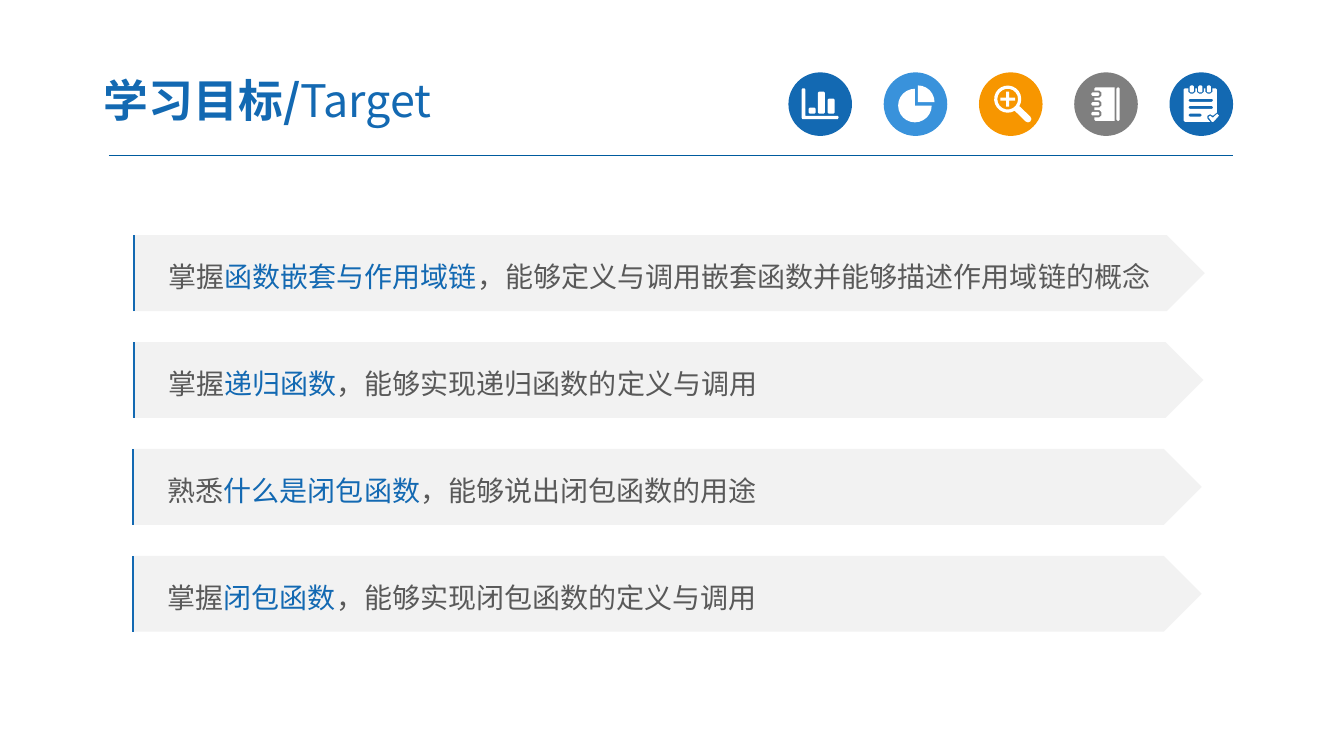
from math import cos, radians, sin

from lxml.etree import SubElement
from pptx import Presentation
from pptx.dml.color import RGBColor
from pptx.enum.shapes import MSO_CONNECTOR, MSO_SHAPE as SHAPE
from pptx.enum.text import MSO_ANCHOR, PP_ALIGN
from pptx.oxml.ns import qn
from pptx.util import Pt

BLUE, LIGHT_BLUE, ORANGE, GRAY = "1369B2", "3992DB", "F79600", "7F7F7F"
WHITE, BAND, BODY, RULE = "FFFFFF", "F2F2F2", "595959", "005B9E"
FONT = "Noto Sans CJK SC"


def color(value):
    return RGBColor.from_string(value)


def write_text(shape, runs, size, insets, line_spacing=None):
    """Fill a shape with one paragraph of (text, color, bold) runs."""
    frame = shape.text_frame
    frame.word_wrap = True
    frame.vertical_anchor = MSO_ANCHOR.MIDDLE
    frame.margin_left, frame.margin_top, frame.margin_right, frame.margin_bottom = map(Pt, insets)
    paragraph = frame.paragraphs[0]
    paragraph.alignment = PP_ALIGN.LEFT
    paragraph.line_spacing = line_spacing
    for text, run_color, bold in runs:
        run = paragraph.add_run()
        run.text = text
        run.font.size = Pt(size)
        run.font.bold = bold
        run.font.name = FONT
        run.font.color.rgb = color(run_color)
        SubElement(run.font._element, qn("a:ea"), typeface=FONT)


class SlidePainter:
    def __init__(self, slide):
        self.shapes = slide.shapes

    def fill(self, shape, fill):
        shape.shadow.inherit = False
        shape.fill.solid()
        shape.fill.fore_color.rgb = color(fill)
        shape.line.fill.background()
        return shape

    def shape(self, kind, left, top, width, height, fill):
        return self.fill(self.shapes.add_shape(kind, Pt(left), Pt(top), Pt(width), Pt(height)), fill)

    def symbol(self, left, top, contours):
        """Draw closed contours as one white shape; inner contours are holes."""
        placed = [[(Pt(left + x), Pt(top + y)) for x, y in contour] for contour in contours]
        builder = self.shapes.build_freeform(*placed[0][0])
        for index, (start, *rest) in enumerate(placed):
            if index:
                builder.move_to(*start)
            builder.add_line_segments(rest, close=True)
        self.fill(builder.convert_to_shape(), WHITE)

    def edge(self, left, top, height, line_color, width, margin=11.5):
        """Draw an upright edge whose frame reaches a margin to its right."""
        builder = self.shapes.build_freeform(Pt(left + margin), Pt(top))
        builder.move_to(Pt(left), Pt(top + height))
        builder.add_line_segments([(Pt(left), Pt(top))], close=False)
        edge = builder.convert_to_shape()
        edge.shadow.inherit = False
        edge.fill.background()
        edge.line.color.rgb = color(line_color)
        edge.line.width = Pt(width)

    def line(self, x1, y1, x2, y2, line_color, width):
        line = self.shapes.add_connector(MSO_CONNECTOR.STRAIGHT, Pt(x1), Pt(y1), Pt(x2), Pt(y2))
        line.line.color.rgb = color(line_color)
        line.line.width = Pt(width)
        SubElement(line._element.spPr, qn("a:effectLst"))

    def text_box(self, left, top, width, height, runs, **style):
        box = self.shapes.add_textbox(Pt(left), Pt(top), Pt(width), Pt(height))
        write_text(box, runs, **style)


# Contours of the icon symbols, measured from the corner of their disc
def block(left, top, width, height, cut=0.8):
    """A rectangle with cut corners."""
    right, bottom = left + width, top + height
    return [(left + cut, top), (right - cut, top), (right, top + cut), (right, bottom - cut),
            (right - cut, bottom), (left + cut, bottom), (left, bottom - cut), (left, top + cut)]


def arc(x, y, radius, start, end, steps):
    angles = [radians(start + (end - start) * step / steps) for step in range(steps + 1)]
    return [(x + radius * cos(angle), y + radius * sin(angle)) for angle in angles]


def bar_chart():
    axes = [(9.4, 12.2), (10, 11.5), (11.5, 11.5), (12.1, 12.2), (12.1, 31), (35.2, 31),
            (35.9, 32.1), (35.2, 33.3), (10, 33.3), (9.4, 32.6)]
    return [axes] + [block(left, top, 5, 29.5 - top)
                     for left, top in ((14.4, 25.2), (21, 13.7), (28, 18.7))]


def pie_chart():
    return [[(22.3, 23.7)] + arc(22.3, 23.7, 12, 0, 270, 18),
            [(24.4, 21.2)] + arc(24.4, 21.2, 11.9, -90, 0, 6)]


def magnifier():
    x, y, arm, half = 20.5, 19.1, 5.3, 1.1
    plus = [(-arm, -half), (-half, -half), (-half, -arm), (half, -arm), (half, -half), (arm, -half),
            (arm, half), (half, half), (half, arm), (-half, arm), (-half, half), (-arm, half)]
    return [arc(x, y, 9.7, 59, 391, 20) + arc(35, 33.3, 2.4, -45, 135, 4),
            arc(x, y, 7.4, 0, 340, 17),
            [(x + dx, y + dy) for dx, dy in plus]]


def notebook():
    ring_tops = [14.3, 21.3, 28.3]
    cover = [(15.2, 10.8), (28.8, 10.8), (28.8, 34.6), (15.2, 34.6), (14.4, 33.8)]
    for top in reversed(ring_tops):
        cover += [(14.4, top + 3.8), (18, top + 3.8), (19.4, top + 2.5),
                  (19.4, top), (18, top - 1.3), (14.4, top - 1.3)]
    cover.append((14.4, 11.6))
    return [cover, block(30.2, 10.8, 2.3, 23.8)] + [block(12.2, top, 5.8, 2.5) for top in ring_tops]


def notepad():
    ring_lefts = [14.4, 20.5, 26.6]
    sheet = [(10.1, 12.3), (10.9, 11.5)]
    for left in ring_lefts:
        sheet += [(left - 1, 11.5), (left - 1, 14), (left + 0.5, 15.2),
                  (left + 2.5, 15.2), (left + 4, 14), (left + 4, 11.5)]
    sheet += [(33.1, 11.5), (33.9, 12.3), (33.9, 28.7), (31, 31), (29, 30),
              (27, 31), (27, 33), (29, 35.3), (10.9, 35.3), (10.1, 34.5)]
    check = [(27.8, 32), (29, 31), (31, 32.4), (34, 29.6), (35.3, 31), (31.4, 35.3), (30.2, 35.3)]
    rules = [block(13.7, top, width, 2.2)
             for top, width in ((18.9, 17.3), (24, 17.3), (29.5, 9.2))]
    return [sheet, check] + rules + [block(left, 9.4, 3, 5) for left in ring_lefts]


ICONS = [(BLUE, bar_chart), (LIGHT_BLUE, pie_chart), (ORANGE, magnifier),
         (GRAY, notebook), (BLUE, notepad)]
GOALS = [  # verb, key phrase, explanation, band left, band width
    ("掌握", "函数嵌套与作用域链", "，能够定义与调用嵌套函数并能够描述作用域链的概念", 95.2, 765.4),
    ("掌握", "递归函数", "，能够实现递归函数的定义与调用", 95, 764.6),
    ("熟悉", "什么是闭包函数", "，能够说出闭包函数的用途", 94.6, 763.8),
    ("掌握", "闭包函数", "，能够实现闭包函数的定义与调用", 94.6, 763.8),
]


def main():
    presentation = Presentation()
    presentation.slide_width, presentation.slide_height = Pt(960), Pt(540)
    painter = SlidePainter(presentation.slides.add_slide(presentation.slide_layouts[6]))

    # Header: rule, icons, title
    painter.line(77.8, 111.4, 880.6, 111.4, RULE, 0.75)
    for index, (disc_color, symbol) in enumerate(ICONS):
        left, top = 563.2 + 68.05 * index, 51.7
        painter.shape(SHAPE.OVAL, left, top, 45.4, 45.4, disc_color)
        painter.symbol(left, top, symbol())
    painter.text_box(64.4, 45.4, 375.8, 51.8,
                     [("学习目标/", BLUE, True), ("Target", BLUE, False)],
                     size=32, insets=(9.6, 5, 9.4, 5))

    # Learning goals
    for index, (verb, phrase, explanation, left, width) in enumerate(GOALS):
        top = 168 + 76.35 * index
        band = painter.shape(SHAPE.PENTAGON, left, top, width, 54.2, BAND)
        write_text(band, [(verb, BODY, False), (phrase, BLUE, False), (explanation, BODY, False)],
                   size=20, insets=(25.2, 3.6, 7.2, 3.6), line_spacing=1.2)
        painter.edge(left + 0.6, top, 54.2, BLUE, 1.5)

    presentation.save("out.pptx")


if __name__ == "__main__":
    main()
